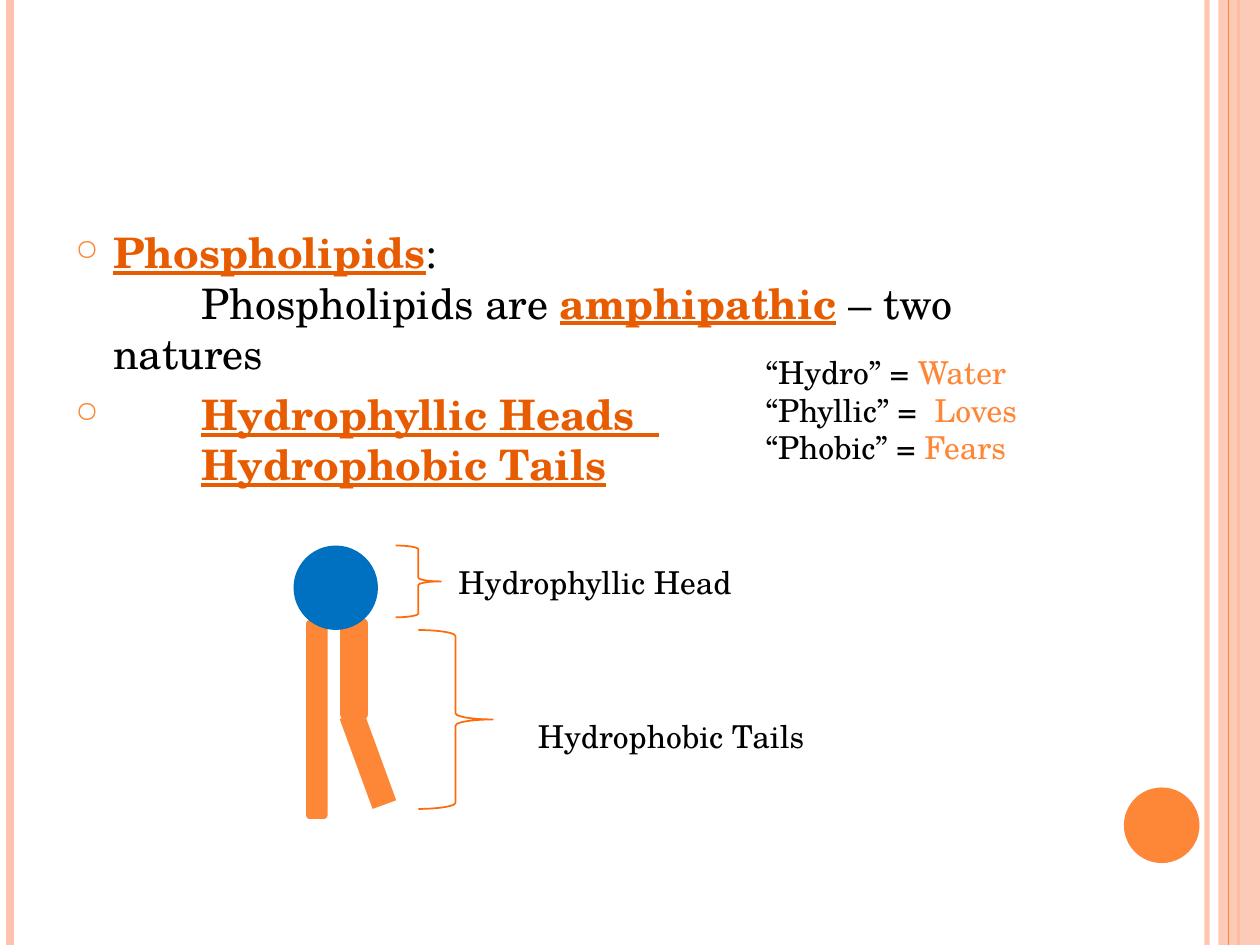
from dataclasses import dataclass

from lxml.etree import SubElement
from pptx import Presentation
from pptx.dml.color import RGBColor
from pptx.enum.shapes import MSO_CONNECTOR, MSO_SHAPE
from pptx.oxml.ns import qn
from pptx.slide import Slide
from pptx.util import Inches, Pt

ORANGE = "FE8637"
PEACH = "FEC3AE"
BLUE = "0070C0"
BLACK = "000000"
KEYWORD = "E75C01"
BRACE = "FF6B0A"


def color(hex_text):
    return RGBColor.from_string(hex_text)


def set_opacity(fill, percent):
    """Make a solid fill, of a shape or of a line, partly transparent."""
    value = fill._xPr.find(qn("a:solidFill"))[0]
    SubElement(value, qn("a:alpha"), val=str(percent * 1000))


@dataclass
class SlideBuilder:
    page: Slide
    font: str = "TeX Gyre Schola"
    bullet_font: str = "OpenSymbol"
    label_size: int = 18
    body_size: int = 24

    def vertical_rule(self, x, width, hex_text, opacity=100):
        rule = self.page.shapes.add_connector(
            MSO_CONNECTOR.STRAIGHT, Inches(x), Inches(0), Inches(x), Inches(7.5))
        rule.line.color.rgb = color(hex_text)
        rule.line.width = Pt(width)
        if opacity < 100:
            set_opacity(rule.line.fill, opacity)
        SubElement(rule._element.spPr, qn("a:effectLst"))

    def solid(self, kind, bounds, hex_text, parent=None, rotation=0, opacity=100):
        shapes = (parent or self.page).shapes
        shape = shapes.add_shape(kind, *map(Inches, bounds))
        shape.shadow.inherit = False
        shape.fill.solid()
        shape.fill.fore_color.rgb = color(hex_text)
        shape.line.fill.background()
        shape.rotation = rotation
        if opacity < 100:
            set_opacity(shape.fill, opacity)

    def brace(self, bounds):
        shape = self.page.shapes.add_shape(MSO_SHAPE.RIGHT_BRACE, *map(Inches, bounds))
        shape.shadow.inherit = False
        shape.fill.background()
        shape.line.color.rgb = color(BRACE)
        shape.line.width = Pt(1)

    def text_box(self, bounds):
        box = self.page.shapes.add_textbox(*map(Inches, bounds))
        box.text_frame.word_wrap = True
        return box.text_frame

    def span(self, para, text, size, hex_text=BLACK, keyword=False):
        span = para.add_run()
        span.text = text
        span.font.name = self.font
        span.font.size = Pt(size)
        span.font.color.rgb = color(hex_text)
        span.font.bold = span.font.underline = keyword

    def label(self, bounds, lines):
        """Add a text box; each line is a list of (text, colour) pairs."""
        para = self.text_box(bounds).paragraphs[0]
        for number, line in enumerate(lines):
            if number:
                para.add_line_break()
            for text, hex_text in line:
                self.span(para, text, self.label_size, hex_text)

    def bullet(self, para):
        para.space_before = Pt(6)
        properties = para._p.get_or_add_pPr()
        properties.set("marL", str(Inches(0.3)))
        properties.set("indent", str(Inches(-0.3)))
        properties.set("defTabSz", str(Inches(1)))
        bullet_color = SubElement(properties, qn("a:buClr"))
        SubElement(bullet_color, qn("a:srgbClr"), val=ORANGE)
        SubElement(properties, qn("a:buSzPct"), val="70000")
        SubElement(properties, qn("a:buFont"), typeface=self.bullet_font)
        SubElement(properties, qn("a:buChar"), char="○")
        tabs = SubElement(properties, qn("a:tabLst"))
        SubElement(tabs, qn("a:tab"), pos=str(Inches(1)), algn="l")

    def bullet_list(self, bounds, items):
        """Add bullets; each item holds lines of (text, is_keyword) pairs."""
        frame = self.text_box(bounds)
        for index, lines in enumerate(items):
            para = frame.add_paragraph() if index else frame.paragraphs[0]
            self.bullet(para)
            for number, line in enumerate(lines):
                if number:
                    para.add_line_break()
                for text, keyword in line:
                    self.span(para, text, self.body_size,
                              KEYWORD if keyword else BLACK, keyword)


def main():
    deck = Presentation()
    deck.slide_width, deck.slide_height = Inches(10), Inches(7.5)
    builder = SlideBuilder(deck.slides.add_slide(deck.slide_layouts[6]))

    builder.vertical_rule(9.58, 3, PEACH, opacity=93)
    builder.vertical_rule(0.08, 4.5, PEACH)
    builder.vertical_rule(9.83, 1.5, ORANGE)
    builder.solid(MSO_SHAPE.RECTANGLE, (9.67, 0, 0.33, 7.5), PEACH, opacity=87)
    builder.vertical_rule(9.75, 0.75, ORANGE)
    builder.solid(MSO_SHAPE.OVAL, (8.92, 6.25, 0.6, 0.6), ORANGE)

    builder.bullet_list((0.5, 1.75, 8.17, 5.33), [
        [[("Phospholipids", True), (":", False)],
         [("\tPhospholipids are ", False), ("amphipathic", True),
          (" – two natures", False)]],
        [[("\t", False), ("Hydrophyllic Heads  ", True)],
         [("\t", False), ("Hydrophobic Tails", True)]],
    ])

    phospholipid = builder.page.shapes.add_group_shape()
    for tail in ((2.43, 4.92, 0.17, 1.58), (2.7, 4.91, 0.22, 0.8)):
        builder.solid(MSO_SHAPE.ROUNDED_RECTANGLE, tail, ORANGE, phospholipid)
    builder.solid(MSO_SHAPE.RECTANGLE, (2.54, 5.93, 0.76, 0.2), ORANGE,
                  phospholipid, rotation=69.9)
    builder.solid(MSO_SHAPE.OVAL, (2.33, 4.33, 0.67, 0.67), BLUE, phospholipid)

    builder.brace((3.14, 4.33, 0.36, 0.57))
    builder.label((3.54, 4.42, 3.08, 0.4), [[("Hydrophyllic Head", BLACK)]])
    builder.brace((3.32, 5, 0.59, 1.42))
    builder.label((4.17, 5.64, 2.75, 0.4), [[("Hydrophobic Tails", BLACK)]])
    builder.label((5.98, 2.75, 2.77, 1.31), [
        [("“Hydro” = ", BLACK), ("Water ", ORANGE)],
        [("“Phyllic” =  ", BLACK), ("Loves", ORANGE)],
        [("“Phobic” = ", BLACK), ("Fears", ORANGE)],
    ])

    deck.save("out.pptx")


if __name__ == "__main__":
    main()
